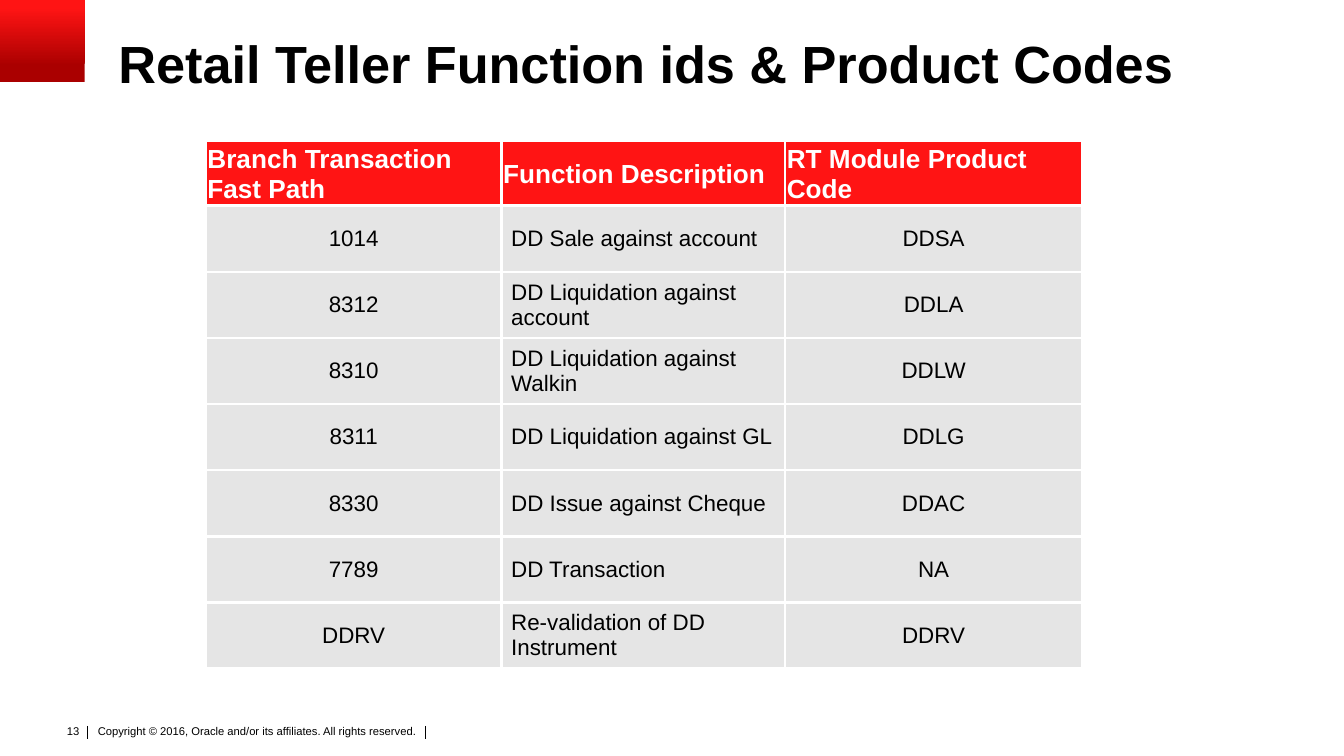
from lxml import etree
from pptx import Presentation
from pptx.dml.color import RGBColor
from pptx.enum import shapes, text
from pptx.oxml import parse_xml
from pptx.oxml.ns import nsdecls, qn
from pptx.util import Cm, Pt

BLACK, WHITE, RED, DARK_RED, GREY = "000000", "FFFFFF", "FF1414", "AA0000", "E5E5E5"
LEFT, CENTER, RIGHT = text.PP_ALIGN.LEFT, text.PP_ALIGN.CENTER, text.PP_ALIGN.RIGHT

HEADINGS = ("Branch Transaction Fast Path", "Function Description", "RT Module Product Code")
TRANSACTIONS = (
    ("1014", "DD Sale against account", "DDSA"),
    ("8312", "DD Liquidation against account", "DDLA"),
    ("8310", "DD Liquidation against Walkin", "DDLW"),
    ("8311", "DD Liquidation against GL", "DDLG"),
    ("8330", "DD Issue against Cheque", "DDAC"),
    ("7789", "DD Transaction", "NA"),
    ("DDRV", "Re-validation of DD Instrument", "DDRV"),
)
COLUMN_WIDTHS = (5.59, 5.36, 5.61)
HEADING_HEIGHT, ROW_HEIGHT = 1.14, 1.25


def color(hex_value):
    return RGBColor.from_string(hex_value)


def style(paragraph, size, hex_value=BLACK, bold=False, align=LEFT):
    paragraph.alignment = align
    font = paragraph.font
    font.name, font.size, font.bold = "Arial", Pt(size), bold
    font.color.rgb = color(hex_value)


def set_margins(target, left, top, right, bottom):
    """Set the inner margins, in cm, of a text frame or a table cell."""
    target.margin_left, target.margin_top = Cm(left), Cm(top)
    target.margin_right, target.margin_bottom = Cm(right), Cm(bottom)


def add_text(slide, wording, box, size, margins, wrap=True,
             anchor=text.MSO_ANCHOR.TOP, **look):
    frame = slide.shapes.add_textbox(*map(Cm, box)).text_frame
    frame.word_wrap = wrap
    frame.vertical_anchor = anchor
    set_margins(frame, *margins)
    paragraph = frame.paragraphs[0]
    paragraph.text = wording
    style(paragraph, size, **look)
    return paragraph


def add_divider(slide, x):
    divider = slide.shapes.add_connector(
        shapes.MSO_CONNECTOR.STRAIGHT, Cm(x), Cm(13.72), Cm(x), Cm(13.97))
    divider.line.color.rgb = color(BLACK)
    divider.line.width = Pt(0.5)
    etree.SubElement(divider._element.spPr, qn("a:effectLst"))


def add_corner_block(slide):
    block = slide.shapes.add_shape(
        shapes.MSO_SHAPE.RECTANGLE, 0, 0, Cm(1.6), Cm(1.55))
    block.shadow.inherit = False
    block.line.fill.background()
    block.fill.gradient()
    block.fill.gradient_angle = 90
    for stop, position, shade in zip(block.fill.gradient_stops, (0.2, 0.9), (DARK_RED, RED)):
        stop.position = position
        stop.color.rgb = color(shade)


def add_borders(cell):
    properties = cell._tc.get_or_add_tcPr()
    for side in ("lnL", "lnR", "lnT", "lnB"):
        properties.append(parse_xml(
            f'<a:{side} {nsdecls("a")} w="{Pt(1.5)}"><a:solidFill>'
            f'<a:srgbClr val="{WHITE}"/></a:solidFill></a:{side}>'))


def fill_cell(cell, wording, background, margins, size, **look):
    add_borders(cell)
    cell.fill.solid()
    cell.fill.fore_color.rgb = color(background)
    cell.vertical_anchor = text.MSO_ANCHOR.MIDDLE
    set_margins(cell, *margins)
    cell.text = wording
    style(cell.text_frame.paragraphs[0], size, **look)


def add_code_table(slide):
    row_heights = [HEADING_HEIGHT] + [ROW_HEIGHT] * len(TRANSACTIONS)
    table = slide.shapes.add_table(
        len(row_heights), len(HEADINGS), Cm(3.89), Cm(2.67),
        Cm(sum(COLUMN_WIDTHS)), Cm(sum(row_heights))).table
    for column, width in zip(table.columns, COLUMN_WIDTHS):
        column.width = Cm(width)
    for row, height in zip(table.rows, row_heights):
        row.height = Cm(height)
    for column, heading in enumerate(HEADINGS):
        fill_cell(table.cell(0, column), heading, RED, (0.03, 0.03, 0.03, 0), 14,
                  hex_value=WHITE, bold=True)
    for row, transaction in enumerate(TRANSACTIONS, start=1):
        for column, (value, align) in enumerate(zip(transaction, (CENTER, LEFT, CENTER))):
            fill_cell(table.cell(row, column), value, GREY, (0.18, 0, 0.18, 0), 12,
                      align=align)


def add_footer(slide):
    add_text(slide, "Copyright © 2016, Oracle and/or its affiliates. All rights reserved.",
             (1.75, 13.64, 6.96, 0.61), 6, (0.1, 0.05, 0.1, 0.05))
    for x in (1.65, 8.04):
        add_divider(slide, x)
    add_text(slide, "13", (0.99, 13.56, 0.76, 0.51), 6, (0.25, 0.13, 0.25, 0.13),
             wrap=False, align=RIGHT)


def main():
    presentation = Presentation()
    presentation.slide_width, presentation.slide_height = Cm(25.4), Cm(14.29)
    slide = presentation.slides.add_slide(presentation.slide_layouts[6])
    add_footer(slide)
    add_corner_block(slide)
    title = add_text(slide, "Retail Teller Function ids & Product Codes",
                     (2.24, 0.69, 22.86, 1.12), 28, (0, 0, 0, 0),
                     anchor=text.MSO_ANCHOR.MIDDLE, bold=True)
    title.line_spacing = 0.9
    add_code_table(slide)
    presentation.save("out.pptx")


if __name__ == "__main__":
    main()
